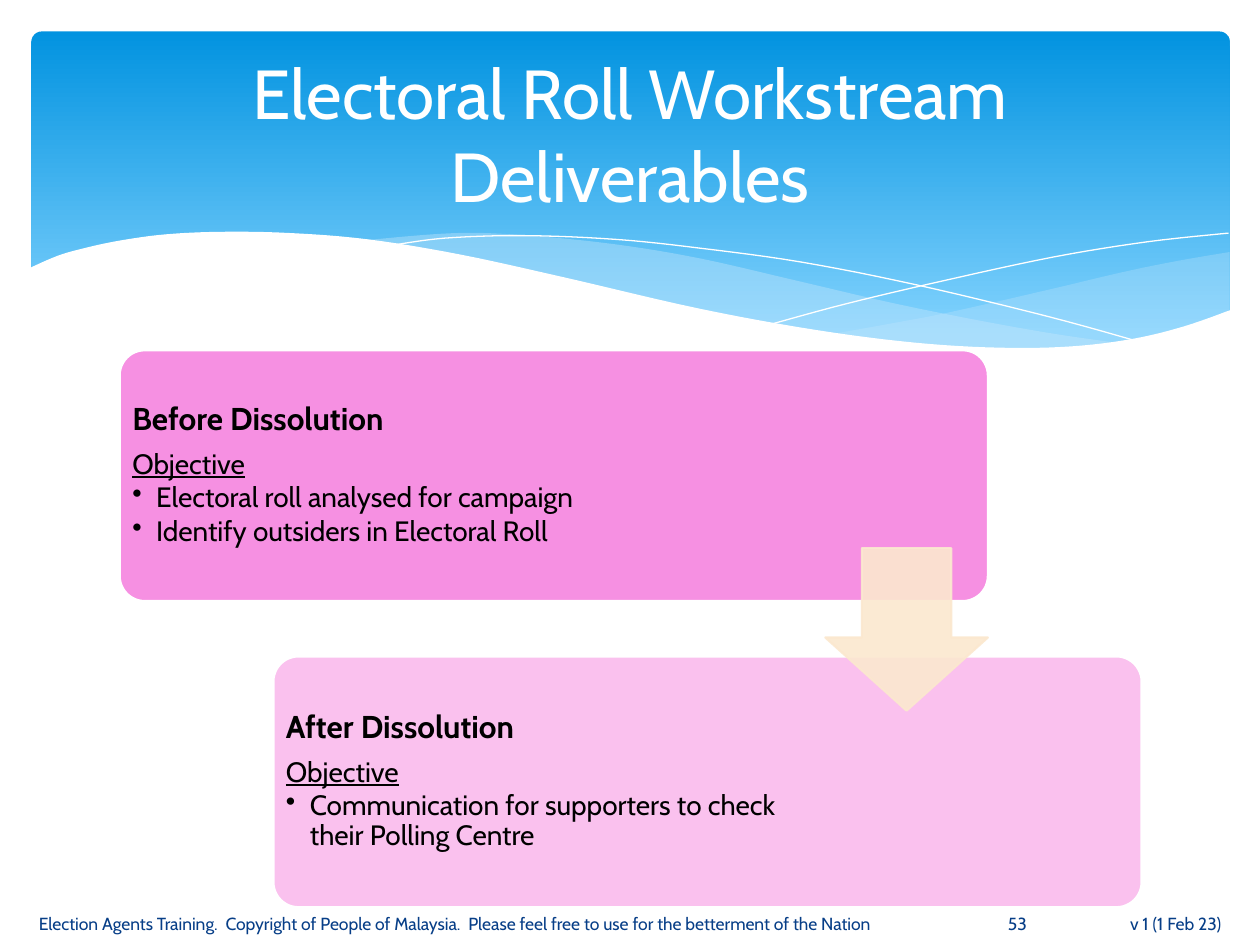
from dataclasses import dataclass

from lxml import etree
from pptx import Presentation
from pptx import util as u
from pptx.dml.color import RGBColor
from pptx.enum import shapes, text
from pptx.oxml.ns import qn

COLUMNS, ROWS = 100, 75  # grid of the slide; positions are (column, row)


@dataclass(frozen=True)
class Theme:
    font: str = "Cabin"
    sky_top: str = "0293E0"
    sky_bottom: str = "83D3FE"
    ripple: str = "C6E7FC"
    white: str = "FFFFFF"
    card: str = "F685DF"
    arrow: str = "FBE8CF"
    ink: str = "000000"
    footer: str = "073E87"
    title_size: float = 39.6
    heading_size: float = 18
    body_size: float = 16
    footer_size: float = 10


def smooth(points, steps=6):
    """Sample a Catmull-Rom curve that passes through the points."""
    ends = [points[0], *points, points[-1]]
    curve = [points[0]]
    for p0, p1, p2, p3 in zip(ends, ends[1:], ends[2:], ends[3:]):
        for step in range(1, steps + 1):
            t = step / steps
            curve.append(tuple(
                (2 * b + (c - a) * t + (2 * a - 5 * b + 4 * c - d) * t**2
                 + (3 * b - a - 3 * c + d) * t**3) / 2
                for a, b, c, d in zip(p0, p1, p2, p3)))
    return curve


def paint(fill, color, opacity=100):
    fill.solid()
    fill.fore_color.rgb = RGBColor.from_string(color)
    if opacity < 100:
        rgb = fill._xPr.find(qn("a:solidFill"))[0]
        etree.SubElement(rgb, qn("a:alpha"), val=str(opacity * 1000))


class Deck:
    def __init__(self, theme):
        self.theme = theme
        self.prs = Presentation()
        self.prs.slide_width, self.prs.slide_height = u.Inches(10), u.Inches(7.5)
        self.slide = self.prs.slides.add_slide(self.prs.slide_layouts[5])

    def place(self, *lengths):
        """Turn alternating columns and rows into slide lengths."""
        cells = (self.prs.slide_width / COLUMNS, self.prs.slide_height / ROWS)
        return [u.Emu(round(n * cells[i % 2])) for i, n in enumerate(lengths)]

    def shape(self, kind, box, adjustments):
        item = self.slide.shapes.add_shape(kind, *self.place(*box))
        item.shadow.inherit = False
        for i, value in enumerate(adjustments):
            item.adjustments[i] = value
        return item

    def block(self, kind, box, adjustments, color, opacity, edge, edge_opacity=100):
        item = self.shape(kind, box, adjustments)
        paint(item.fill, color, opacity)
        paint(item.line.fill, edge, edge_opacity)
        item.line.width = u.Pt(1.25)

    def sky(self, box):
        band = self.shape(shapes.MSO_SHAPE.ROUNDED_RECTANGLE, box, [0.03])
        band.line.fill.background()
        band.fill.gradient()
        band.fill.gradient_angle = 270
        stops = ((0, self.theme.sky_top), (0.9, self.theme.sky_bottom))
        for stop, (position, color) in zip(band.fill.gradient_stops, stops):
            stop.position = position
            stop.color.rgb = RGBColor.from_string(color)

    def wave(self, *edges, color, opacity=100, outline=False):
        """Join smoothed edges into a filled area, or draw them as a hairline."""
        start, *rest = [tuple(self.place(*p)) for edge in edges for p in smooth(edge)]
        builder = self.slide.shapes.build_freeform(*start)
        builder.add_line_segments(rest, close=not outline)
        item = builder.convert_to_shape()
        item.shadow.inherit = False
        if outline:
            item.fill.background()
            paint(item.line.fill, color)
            item.line.width = u.Pt(0)
        else:
            paint(item.fill, color, opacity)
            item.line.fill.background()

    def add_words(self, paragraph, words, size, color, bold=False, underline=False):
        run = paragraph.add_run()
        run.text = words
        run.font.name, run.font.size = self.theme.font, u.Pt(size)
        run.font.bold, run.font.underline = bold, underline
        run.font.color.rgb = RGBColor.from_string(color)

    def frame(self, holder):
        body = holder.text_frame
        body.word_wrap = True
        body.auto_size = text.MSO_AUTO_SIZE.NONE
        body.vertical_anchor = text.MSO_ANCHOR.MIDDLE
        return body

    def textbox(self, box):
        return self.frame(self.slide.shapes.add_textbox(*self.place(*box)))

    def title(self, words, box):
        holder = self.slide.shapes.title
        holder.left, holder.top, holder.width, holder.height = self.place(*box)
        paragraph = self.frame(holder).paragraphs[0]
        paragraph.alignment = text.PP_ALIGN.CENTER
        self.add_words(paragraph, words, self.theme.title_size, self.theme.white)
        tree = holder.element.getparent()
        tree.append(holder.element)  # in front of the sky

    def card(self, box, opacity, text_width, heading, goals):
        theme = self.theme
        self.block(shapes.MSO_SHAPE.ROUNDED_RECTANGLE, box, [0.1],
                   theme.card, opacity, theme.white)
        left, top, _, height = box
        body = self.textbox((left + 0.6, top + 0.6, text_width, height - 1.2))
        body.margin_left = body.margin_right = u.Inches(0.04)
        body.margin_top = body.margin_bottom = u.Inches(0.07)
        first = body.paragraphs[0]
        first.line_spacing, first.space_after = 0.9, u.Pt(7)
        self.add_words(first, heading, theme.heading_size, theme.ink, bold=True)
        for i, words in enumerate(["Objective", *goals]):
            line = body.add_paragraph()
            line.level, line.line_spacing, line.space_after = 1, 0.9, u.Pt(2)
            props = line._p.get_or_add_pPr()
            props.set("marL", str(u.Inches(0.19)))
            props.set("indent", str(-u.Inches(0.19)))
            if i:
                etree.SubElement(props, qn("a:buChar"), char="•")
            else:
                etree.SubElement(props, qn("a:buNone"))
            self.add_words(line, words, theme.body_size, theme.ink, underline=not i)

    def footer(self, left, width, words, align):
        paragraph = self.textbox((left, 72, width, 2.6)).paragraphs[0]
        paragraph.alignment = align
        self.add_words(paragraph, words, self.theme.footer_size, self.theme.footer)


def main():
    theme = Theme()
    deck = Deck(theme)

    deck.sky((2.5, 2.5, 95.1, 27))
    deck.wave([(97.6, 20), (93.5, 20.7), (89.1, 21.6), (83.2, 23), (75.3, 24.8),
               (70.6, 25.7), (66.1, 26.5)],
              [(66.1, 26.5), (70.5, 27.1), (75.7, 27.6), (81.4, 27.8), (86.3, 27.5),
               (90.5, 26.9), (94.2, 25.9), (97.6, 24.7)],
              color=theme.ripple, opacity=29)
    deck.wave([(89.3, 27.3), (83.7, 26.5), (77.5, 25.4), (70.6, 24), (62.9, 22.2),
               (55.5, 20.5), (48.9, 19.4), (42, 18.7), (36.1, 18.5), (28.6, 19.1)],
              [(28.6, 19.1), (36.2, 20.3), (44.9, 22.2), (53, 24), (61.8, 25.8),
               (69.5, 27), (77.3, 27.7), (83.8, 27.8), (89.3, 27.3)],
              color=theme.ripple, opacity=40)
    deck.wave([(30.9, 19.5), (35.3, 18.9), (41.6, 18.7), (48.9, 19), (55.6, 19.7),
               (63.6, 20.8), (72.7, 22.6), (83.1, 25.1), (90.7, 27.2)],
              color=theme.white, outline=True)
    deck.wave([(61.3, 25.7), (67.2, 24.1), (74.8, 22.3), (83.6, 20.4), (91, 19.2),
               (97.5, 18.5)], color=theme.white, outline=True)
    deck.wave([(97.7, 24.6), (94, 25.9), (89.9, 26.9), (85, 27.5), (79.3, 27.6),
               (72.6, 27.2), (64.8, 26.2), (55.5, 24.5), (44.7, 22), (36.5, 20.2),
               (29.2, 19), (23, 18.5), (17.7, 18.4), (13.2, 18.6), (9.5, 19.1),
               (6.7, 19.7), (4.6, 20.3), (2.3, 21.3)],
              [(2.3, 32.9), (97.7, 32.9)], color=theme.white)

    steps = [
        (90, 48.3, "Before Dissolution",
         ["Electoral roll analysed for campaign",
          "Identify outsiders in Electoral Roll"]),
        (50, 42.6, "After Dissolution",
         ["Communication for supporters to check their Polling Centre"]),
    ]
    for i, step in enumerate(steps):
        deck.card((9.5 + 12.2 * i, 27.8 + 24.3 * i, 68.9, 19.9), *step)
    deck.block(shapes.MSO_SHAPE.DOWN_ARROW, (65.5, 43.5, 12.9, 12.9), [0.55, 0.45],
               theme.arrow, 90, theme.arrow, 90)

    align = text.PP_ALIGN
    deck.footer(83.9, 14, "v 1 (1 Feb 23)", align.RIGHT)
    deck.footer(2.1, 72, "Election Agents Training.  Copyright of People of Malaysia.  "
                "Please feel free to use for the betterment of the Nation", align.LEFT)
    deck.footer(77.6, 6.3, "53", align.CENTER)
    deck.title("Electoral Roll Workstream Deliverables", (5, 3.7, 90, 13.7))

    deck.prs.save("out.pptx")


if __name__ == "__main__":
    main()
